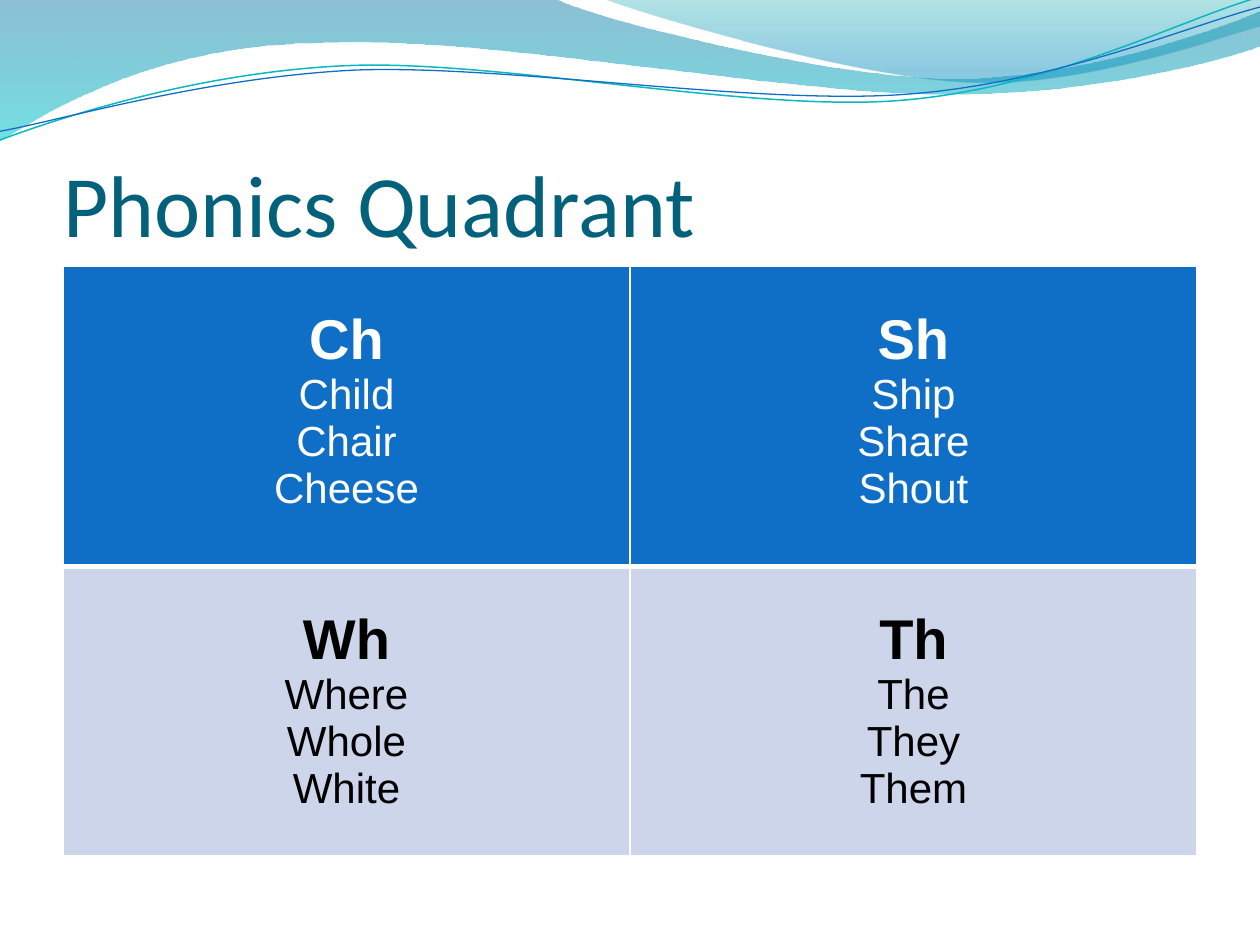
from dataclasses import dataclass
from math import cos, radians, sin

from lxml.etree import SubElement
from pptx import Presentation
from pptx.dml.color import RGBColor
from pptx.enum.text import MSO_ANCHOR, MSO_AUTO_SIZE, PP_ALIGN
from pptx.oxml import parse_xml
from pptx.oxml.ns import nsdecls, qn
from pptx.util import Pt


@dataclass(frozen=True)
class Theme:
    title_font: str = "Calibri"
    table_font: str = "Arial"
    title_size: int = 50
    sound_size: int = 32
    word_size: int = 24
    title: str = "04617B"
    border: str = "FFFFFF"
    top_fill: str = "0F6FC6"
    top_text: str = "FFFFFF"
    bottom_fill: str = "CCD5EA"
    bottom_text: str = "000000"
    teal_line: str = "0AB8BF"
    blue_line: str = "0F6FC6"
    # Gradient stops: position, colour, opacity in percent
    long_wave: tuple = ((0, "0074A1", 45), (1, "00C6CF", 55))
    short_wave: tuple = ((0, "00A1A9", 30), (0.8, "008BBF", 45))


@dataclass(frozen=True)
class Outline:
    """A box (left, top, width, height), and segments in slide points.

    The first segment is the start; later ones are a straight line (one point)
    or a Bezier curve (three points).
    """
    box: tuple
    segments: list
    rotation: float = 0
    closed: bool = True


THEME = Theme()
LINE_TILT = -2.7

LONG_WAVE = Outline((-0.7, -0.7, 721.5, 82), [
    [(0, -0.7)], [(317, -0.7)],
    [(343, 12), (478, 45), (546, 45)], [(614, 45), (690, 19), (720, 6.5)],
    [(721, 26)],
    [(708, 32), (626, 55), (537, 54)], [(447, 54), (275, 20), (185, 24.5)],
    [(93, 25), (33, 60), (-0.7, 81)], [(0, -0.7)],
])
SHORT_WAVE = Outline((345, -0.7, 375, 50.4), [
    [(345, -0.7)], [(366, 8), (491, 45), (554, 47)],
    [(616, 50), (692, 23), (720, 15)], [(720, 0)], [(345, -0.7)],
])
TEAL_LINE = Outline((-1.4, 15.8, 721.4, 51.1), [
    [(0, 80)], [(35, 67), (114, 41), (199, 37.5)],
    [(284, 34), (427, 64), (513, 57.5)], [(600, 51), (675, 11), (719, -1.5)],
], LINE_TILT, False)
BLUE_LINE = Outline((-1.4, 21.6, 722.2, 41.8), [
    [(0, 75)], [(34, 69), (118, 44), (204, 40)],
    [(290, 37), (430, 60), (516, 54)], [(602, 48), (678, 15), (720, 4)],
], LINE_TILT, False)

QUADRANTS = [
    [("Ch", ["Child", "Chair", "Cheese"]), ("Sh", ["Ship", "Share", "Shout"])],
    [("Wh", ["Where", "Whole", "White"]), ("Th", ["The", "They", "Them"])],
]
ROW_HEIGHTS = (171.5, 165)


def color(value):
    return RGBColor.from_string(value)


def to_local(point, outline):
    """Convert a slide point to the unrotated space of the outline's box."""
    left, top, width, height = outline.box
    x = point[0] - left - width / 2
    y = point[1] - top - height / 2
    angle = radians(-outline.rotation)
    return (Pt(x * cos(angle) - y * sin(angle) + width / 2),
            Pt(x * sin(angle) + y * cos(angle) + height / 2))


def add_outline(slide, outline):
    left, top, width, height = outline.box
    builder = slide.shapes.build_freeform(Pt(left), Pt(top))
    builder.add_line_segments([(Pt(left + width), Pt(top + height))], close=False)
    shape = builder.convert_to_shape()
    shape.rotation = outline.rotation
    shape.shadow.inherit = False

    # The builder only knows straight lines, so the curves are written here
    drawing = next(shape._element.iter(qn("a:path")))
    for command in list(drawing):
        drawing.remove(command)
    for index, segment in enumerate(outline.segments):
        name = "a:cubicBezTo" if len(segment) == 3 else "a:lnTo"
        command = SubElement(drawing, qn(name if index else "a:moveTo"))
        for point in segment:
            x, y = to_local(point, outline)
            SubElement(command, qn("a:pt"), x=str(int(x)), y=str(int(y)))
    if outline.closed:
        SubElement(drawing, qn("a:close"))
    return shape


def add_wave(slide, outline, stops):
    shape = add_outline(slide, outline)
    shape.line.fill.background()
    shape.fill.gradient()
    shape.fill.gradient_angle = 270
    for stop, (position, value, opacity) in zip(shape.fill.gradient_stops, stops):
        stop.position = position
        stop.color.rgb = color(value)
    colors = shape._element.spPr.iter(qn("a:srgbClr"))
    for element, (position, value, opacity) in zip(colors, stops):
        SubElement(element, qn("a:alpha")).set("val", str(opacity * 1000))


def add_curved_line(slide, outline, value, width):
    shape = add_outline(slide, outline)
    shape.fill.background()
    shape.line.color.rgb = color(value)
    shape.line.width = Pt(width)


def add_run(paragraph, text, font, size, value, bold=False):
    run = paragraph.add_run()
    run.text = text
    run.font.name = font
    run.font.size = Pt(size)
    run.font.bold = bold
    run.font.color.rgb = color(value)


def place_title(slide, text):
    title = slide.shapes.title
    title.left, title.top, title.width, title.height = Pt(36), Pt(55.5), Pt(648), Pt(90)
    frame = title.text_frame
    frame.auto_size = MSO_AUTO_SIZE.NONE
    frame.word_wrap = True
    frame.vertical_anchor = MSO_ANCHOR.BOTTOM
    frame.margin_left = frame.margin_right = frame.margin_bottom = 0
    frame.margin_top = Pt(3.6)
    paragraph = frame.paragraphs[0]
    paragraph.alignment = PP_ALIGN.LEFT
    add_run(paragraph, text, THEME.title_font, THEME.title_size, THEME.title)
    # Bring the title in front of the waves
    slide.shapes._spTree.append(title._element)


def set_borders(cell, widths):
    """Draw left, right, top and bottom borders of the given widths."""
    properties = cell._tc.get_or_add_tcPr()
    for index, (side, width) in enumerate(zip("LRTB", widths)):
        properties.insert(index, parse_xml(
            f'<a:ln{side} {nsdecls("a")} w="{Pt(width)}"><a:solidFill>'
            f'<a:srgbClr val="{THEME.border}"/></a:solidFill></a:ln{side}>'))


def fill_quadrant(cell, sound, words, fill, text_color):
    cell.fill.solid()
    cell.fill.fore_color.rgb = color(fill)
    cell.margin_top = Pt(24.3)
    frame = cell.text_frame
    lines = [(sound, THEME.sound_size, True)]
    lines += [(word, THEME.word_size, False) for word in words]
    for index, (text, size, bold) in enumerate(lines):
        paragraph = frame.add_paragraph() if index else frame.paragraphs[0]
        paragraph.alignment = PP_ALIGN.CENTER
        add_run(paragraph, text, THEME.table_font, size, text_color, bold)


def add_quadrant_table(slide):
    table = slide.shapes.add_table(
        2, 2, Pt(36), Pt(152.3), Pt(648), Pt(sum(ROW_HEIGHTS))).table
    table.horz_banding = False
    styles = [(THEME.top_fill, THEME.top_text, (1, 1, 1, 3)),
              (THEME.bottom_fill, THEME.bottom_text, (1, 1, 3, 1))]
    for row, (quadrants, (fill, text_color, widths)) in enumerate(zip(QUADRANTS, styles)):
        table.rows[row].height = Pt(ROW_HEIGHTS[row])
        for column, (sound, words) in enumerate(quadrants):
            cell = table.cell(row, column)
            fill_quadrant(cell, sound, words, fill, text_color)
            set_borders(cell, widths)


def main():
    presentation = Presentation()
    presentation.slide_width, presentation.slide_height = Pt(720), Pt(540)
    slide = presentation.slides.add_slide(presentation.slide_layouts[5])
    add_wave(slide, LONG_WAVE, THEME.long_wave)
    add_wave(slide, SHORT_WAVE, THEME.short_wave)
    add_curved_line(slide, TEAL_LINE, THEME.teal_line, 0.85)
    add_curved_line(slide, BLUE_LINE, THEME.blue_line, 0.75)
    place_title(slide, "Phonics Quadrant")
    add_quadrant_table(slide)
    presentation.save("out.pptx")


if __name__ == "__main__":
    main()
